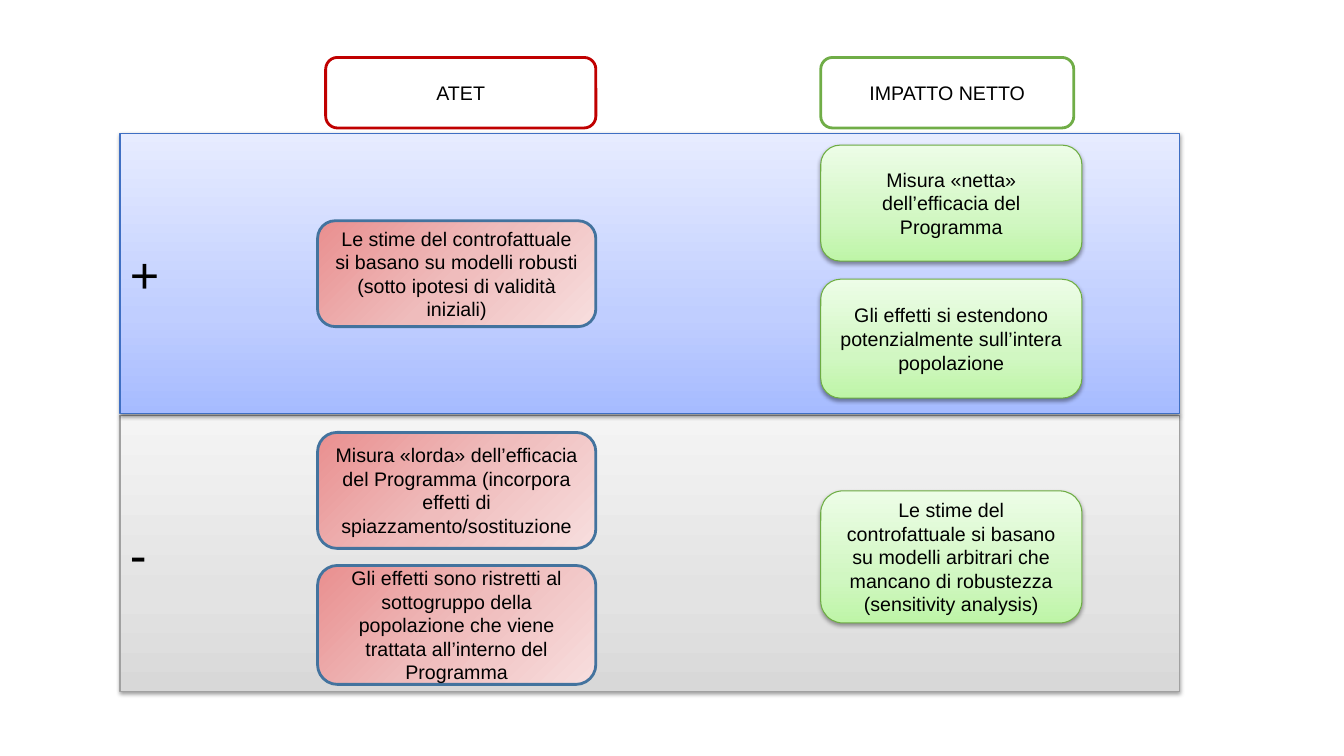
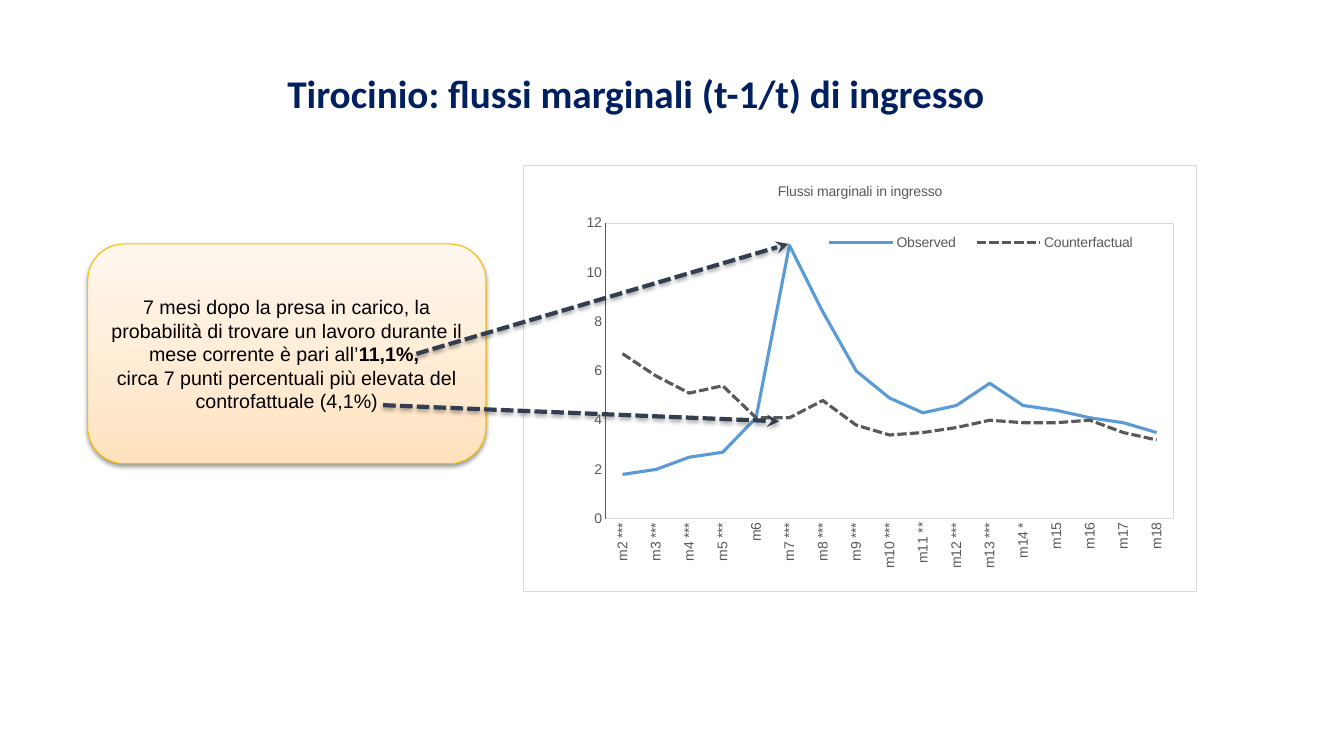
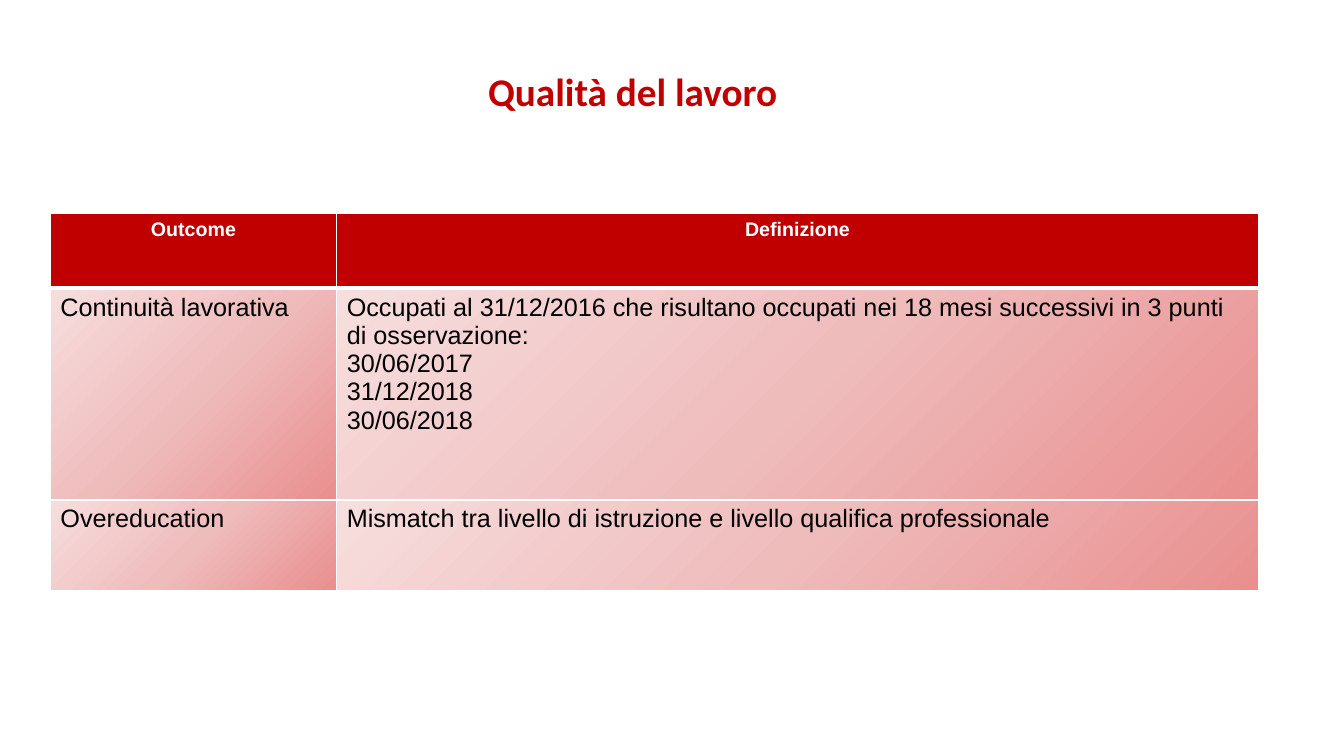
from dataclasses import dataclass

from pptx import Presentation
from pptx.chart.data import CategoryChartData
from pptx.dml.color import RGBColor
from pptx.enum.chart import XL_CHART_TYPE, XL_LEGEND_POSITION, XL_TICK_MARK
from pptx.enum.dml import MSO_LINE
from pptx.enum.shapes import MSO_CONNECTOR, MSO_SHAPE
from pptx.enum.text import MSO_ANCHOR, PP_ALIGN
from pptx.oxml import parse_xml
from pptx.oxml.ns import nsdecls, qn
from pptx.util import Inches, Pt


@dataclass(frozen=True)
class Theme:
    body_font: str = "Arial"
    title_font: str = "Calibri"
    black: str = "000000"
    white: str = "FFFFFF"
    navy: str = "002060"
    red: str = "C00000"
    green: str = "70AD47"
    arrow: str = "333F50"
    chart_text: str = "595959"
    chart_border: str = "D9D9D9"
    observed: str = "5B9BD5"
    title_size: int = 28
    sign_size: int = 36
    table_size: int = 18
    box_size: int = 14
    chart_size: int = 10


THEME = Theme()
RED_STOPS = ((0, "E98F8F"), (50, "EFBCBC"), (100, "F7DEDE"))


def panel(bottom, middle, top, line):
    """Style with a vertical gradient, a thin outline and a shadow."""
    return {"stops": ((0, bottom), (35, middle), (100, top)), "angle": 270,
            "line": line, "line_width": 0.75, "shadow": True}


STYLES = {
    "minus": panel("D8D8D8", "E3E3E3", "F4F4F4", "A1A1A1"),
    "plus": panel("A6BBFF", "C0CEFF", "E7ECFF", "3F6FC3"),
    "net": panel("BEF5A7", "D1F7C2", "EDFDE7", "6DAC43"),
    "note": panel("FFE2BD", "FFEAD1", "FFF7EE", "F9BC00"),
    "atet": {"stops": RED_STOPS, "angle": 45, "line": "43739E", "line_width": 2},
    "atet_head": {"line": THEME.red, "line_width": 2},
    "net_head": {"line": THEME.green, "line_width": 2},
}


def set_values(target, **values):
    for name, value in values.items():
        setattr(target, name, value)


def set_font(font, size, color=THEME.black, bold=False, name=THEME.body_font):
    set_values(font, name=name, size=Pt(size), bold=bold)
    font.color.rgb = RGBColor.from_string(color)


def set_line(line, color, width):
    line.color.rgb = RGBColor.from_string(color)
    line.width = Pt(width)


def set_gradient(fill, properties, stops, angle):
    """Put a gradient of several stops in place of an emptied fill."""
    fill.background()
    stop_xml = "".join(
        f'<a:gs pos="{position * 1000}"><a:srgbClr val="{color}"/></a:gs>'
        for position, color in stops)
    gradient = parse_xml(
        f'<a:gradFill {nsdecls("a")} rotWithShape="1"><a:gsLst>{stop_xml}</a:gsLst>'
        f'<a:lin ang="{angle * 60000}" scaled="0"/></a:gradFill>')
    properties.replace(properties.find(qn("a:noFill")), gradient)


def add_shadow(properties, distance=1.6, opacity=38):
    for effects in properties.findall(qn("a:effectLst")):
        properties.remove(effects)
    properties.append(parse_xml(
        f'<a:effectLst {nsdecls("a")}><a:outerShdw blurRad="{Pt(3.1)}" '
        f'dist="{Pt(distance)}" dir="5400000" rotWithShape="0">'
        f'<a:srgbClr val="000000"><a:alpha val="{opacity * 1000}"/></a:srgbClr>'
        '</a:outerShdw></a:effectLst>'))


def write_paragraphs(frame, paragraphs, size, align, **font):
    """Each paragraph is a string or a list of (text, bold) runs."""
    for index, content in enumerate(paragraphs):
        paragraph = frame.add_paragraph() if index else frame.paragraphs[0]
        paragraph.alignment = align
        runs = [(content, font.get("bold", False))] if isinstance(content, str) else content
        for text, bold in runs:
            run = paragraph.add_run()
            run.text = text
            set_font(run.font, size, **{**font, "bold": bold})


def add_box(slide, place, style_name, paragraphs, size=THEME.box_size,
            align=PP_ALIGN.CENTER, preset=MSO_SHAPE.ROUNDED_RECTANGLE):
    style = STYLES[style_name]
    shape = slide.shapes.add_shape(preset, *map(Inches, place))
    shape.shadow.inherit = False
    if "stops" in style:
        set_gradient(shape.fill, shape.element.spPr, style["stops"], style["angle"])
    else:
        shape.fill.solid()
        shape.fill.fore_color.rgb = RGBColor.from_string(THEME.white)
    set_line(shape.line, style["line"], style["line_width"])
    if style.get("shadow"):
        add_shadow(shape.element.spPr)
    set_values(shape.text_frame, word_wrap=True, vertical_anchor=MSO_ANCHOR.MIDDLE)
    write_paragraphs(shape.text_frame, paragraphs, size, align)


def add_title(slide, place, text, color):
    frame = slide.shapes.add_textbox(*map(Inches, place)).text_frame
    margin = Inches(0.1)
    set_values(frame, word_wrap=True, vertical_anchor=MSO_ANCHOR.MIDDLE,
               margin_left=margin, margin_right=margin,
               margin_top=margin, margin_bottom=margin)
    write_paragraphs(frame, [text], THEME.title_size, PP_ALIGN.CENTER,
                     color=color, bold=True, name=THEME.title_font)
    frame.paragraphs[0].line_spacing = 0.9


def add_arrow(slide, start, end):
    arrow = slide.shapes.add_connector(
        MSO_CONNECTOR.STRAIGHT, *map(Inches, (*start, *end)))
    set_line(arrow.line, THEME.arrow, 3)
    arrow.line.dash_style = MSO_LINE.SQUARE_DOT
    properties = arrow.element.spPr
    properties.find(qn("a:ln")).append(
        parse_xml(f'<a:tailEnd {nsdecls("a")} type="stealth"/>'))
    add_shadow(properties, distance=1.8, opacity=35)


def manual_layout(x, y, width, height, inner=False):
    target = '<c:layoutTarget val="inner"/>' if inner else ""
    return parse_xml(
        f'<c:layout {nsdecls("c")}><c:manualLayout>{target}'
        '<c:xMode val="edge"/><c:yMode val="edge"/>'
        f'<c:x val="{x}"/><c:y val="{y}"/><c:w val="{width}"/><c:h val="{height}"/>'
        '</c:manualLayout></c:layout>')


def chart_frame(fill):
    return parse_xml(
        f'<c:spPr {nsdecls("c", "a")}>{fill}<a:ln w="{Pt(0.75)}"><a:solidFill>'
        f'<a:srgbClr val="{THEME.chart_border}"/></a:solidFill></a:ln></c:spPr>')


def place_chart_parts(chart):
    """Set the plot and legend positions and the two frames."""
    space = chart.element
    plot_area = space.find(".//" + qn("c:plotArea"))
    for layout in plot_area.findall(qn("c:layout")):
        plot_area.remove(layout)
    plot_area.insert(0, manual_layout(0.122, 0.135, 0.844, 0.695, inner=True))
    plot_area.append(chart_frame("<a:noFill/>"))
    legend = space.find(".//" + qn("c:legend"))
    for layout in legend.findall(qn("c:layout")):
        legend.remove(layout)
    legend.find(qn("c:legendPos")).addnext(manual_layout(0.43, 0.15, 0.5, 0.06))
    white = f'<a:solidFill><a:srgbClr val="{THEME.white}"/></a:solidFill>'
    space.find(qn("c:chart")).addnext(chart_frame(white))


def add_line_chart(slide, place, title, categories, series_styles):
    """series_styles holds (name, values, color, dash) for each line."""
    data = CategoryChartData(number_format="0.0")
    data.categories = categories
    for name, values, _, _ in series_styles:
        data.add_series(name, values)
    chart = slide.shapes.add_chart(
        XL_CHART_TYPE.LINE, *map(Inches, place), data).chart
    set_font(chart.font, THEME.chart_size)
    set_values(chart, has_title=True, has_legend=True)
    write_paragraphs(chart.chart_title.text_frame, [title], THEME.chart_size,
                     PP_ALIGN.CENTER, color=THEME.chart_text)
    set_values(chart.legend, position=XL_LEGEND_POSITION.BOTTOM,
               include_in_layout=False)
    set_font(chart.legend.font, THEME.chart_size, THEME.chart_text)

    axis_lines = ((chart.category_axis, THEME.chart_border),
                  (chart.value_axis, THEME.chart_text))
    for axis, color in axis_lines:
        set_values(axis, has_major_gridlines=False,
                   major_tick_mark=XL_TICK_MARK.NONE,
                   minor_tick_mark=XL_TICK_MARK.NONE)
        set_font(axis.tick_labels.font, THEME.chart_size, THEME.chart_text)
        set_line(axis.format.line, color, 0.75)
    set_values(chart.value_axis, minimum_scale=0, maximum_scale=12, major_unit=2)
    set_values(chart.value_axis.tick_labels, number_format="0",
               number_format_is_linked=False)
    label_body = chart.category_axis.element.find(
        qn("c:txPr")).find(qn("a:bodyPr")) if hasattr(
        chart.category_axis, "element") else chart.element.find(
        ".//" + qn("c:catAx")).find(qn("c:txPr")).find(qn("a:bodyPr"))
    label_body.set("rot", "-5400000")
    label_body.set("vert", "horz")

    plot = chart.plots[0]
    plot.vary_by_categories = False
    for series, (_, _, color, dash) in zip(plot.series, series_styles):
        series.smooth = False
        set_line(series.format.line, color, 2.25)
        if dash:
            series.format.line.dash_style = dash
    place_chart_parts(chart)


def set_cell_borders(cell, bottom_width):
    properties = cell._tc.get_or_add_tcPr()
    widths = {"lnL": 1, "lnR": 1, "lnT": 1, "lnB": bottom_width}
    for index, (side, width) in enumerate(widths.items()):
        properties.insert(index, parse_xml(
            f'<a:{side} {nsdecls("a")} w="{Pt(width)}"><a:solidFill>'
            f'<a:srgbClr val="{THEME.white}"/></a:solidFill></a:{side}>'))


def add_definition_table(slide, place, widths, heights, rows):
    """Each cell of rows is a list of paragraphs; the first row is the header."""
    table = slide.shapes.add_table(
        len(rows), len(widths), *map(Inches, place)).table
    set_values(table, first_row=False, horz_banding=False)
    for column, width in zip(table.columns, widths):
        column.width = Inches(width)
    for row_index, (row, height) in enumerate(zip(rows, heights)):
        table.rows[row_index].height = Inches(height)
        for column_index, paragraphs in enumerate(row):
            cell = table.cell(row_index, column_index)
            if row_index == 0:
                cell.fill.solid()
                cell.fill.fore_color.rgb = RGBColor.from_string(THEME.red)
                write_paragraphs(cell.text_frame, paragraphs, THEME.box_size,
                                 PP_ALIGN.CENTER, color=THEME.white, bold=True)
            else:
                set_gradient(cell.fill, cell._tc.get_or_add_tcPr(), RED_STOPS, 225)
                write_paragraphs(cell.text_frame, paragraphs, THEME.table_size,
                                 PP_ALIGN.LEFT)
            # The line under a cell is also the top line of the next row.
            set_cell_borders(cell, 3 if row_index == 0 else 1)


def build_comparison(slide):
    for style, sign, top, height in (("minus", "-", 4.12, 2.74),
                                     ("plus", "+", 1.32, 2.78)):
        add_box(slide, (1.19, top, 10.51, height), style, [sign],
                THEME.sign_size, PP_ALIGN.LEFT, MSO_SHAPE.RECTANGLE)
    columns = {
        "atet": (3.15, 2.76, (
            (2.19, 1.05, "Le stime del controfattuale si basano su modelli robusti "
                         "(sotto ipotesi di validità iniziali)"),
            (4.29, 1.15, "Misura «lorda» dell’efficacia del Programma (incorpora "
                         "effetti di spiazzamento/sostituzione"),
            (5.61, 1.18, "Gli effetti sono ristretti al sottogruppo della popolazione "
                         "che viene trattata all’interno del Programma"))),
        "net": (8.14, 2.59, (
            (1.44, 1.15, "Misura «netta» dell’efficacia del Programma"),
            (2.77, 1.18, "Gli effetti si estendono potenzialmente sull’intera "
                         "popolazione"),
            (4.87, 1.31, "Le stime del controfattuale si basano su modelli arbitrari "
                         "che mancano di robustezza (sensitivity analysis)"))),
    }
    for style, (left, width, boxes) in columns.items():
        for top, height, text in boxes:
            add_box(slide, (left, top, width, height), style, [text])
    add_box(slide, (3.23, 0.57, 2.68, 0.7), "atet_head", ["ATET"])
    add_box(slide, (8.14, 0.57, 2.51, 0.7), "net_head", ["IMPATTO NETTO"])


def build_entry_flows(slide):
    add_box(slide, (0.87, 2.42, 3.95, 2.18), "note", [
        [("7 mesi dopo la presa in carico, la probabilità di trovare un lavoro "
          "durante il mese corrente è pari all’", False), ("11,1%, ", True)],
        "circa 7 punti percentuali più elevata del controfattuale (4,1%)"])
    add_title(slide, (0.87, 0.64, 10.87, 0.62),
              "Tirocinio: flussi marginali (t-1/t) di ingresso", THEME.navy)
    categories = ["m2 ***", "m3 ***", "m4 ***", "m5 ***", "m6", "m7 ***", "m8 ***",
                  "m9 ***", "m10 ***", "m11 **", "m12 ***", "m13 ***", "m14 *",
                  "m15", "m16", "m17", "m18"]
    observed = (1.8, 2, 2.5, 2.7, 4.1, 11.1, 8.4, 6, 4.9, 4.3, 4.6, 5.5, 4.6, 4.4,
                4.1, 3.9, 3.5)
    counterfactual = (6.7, 5.8, 5.1, 5.4, 4.1, 4.1, 4.8, 3.8, 3.4, 3.5, 3.7, 4, 3.9,
                      3.9, 4, 3.5, 3.2)
    add_line_chart(
        slide, (5.19, 1.64, 6.68, 4.23), "Flussi marginali in ingresso", categories,
        (("Observed", observed, THEME.observed, None),
         ("Counterfactual", counterfactual, THEME.chart_text, MSO_LINE.SQUARE_DOT)))
    add_arrow(slide, (4.13, 3.51), (7.82, 2.42))
    add_arrow(slide, (3.8, 4.02), (7.73, 4.18))


def build_job_quality(slide):
    add_title(slide, (0.89, 0.64, 10.77, 0.59), "Qualità del lavoro", THEME.red)
    add_definition_table(
        slide, (0.5, 2.12, 11.98, 3.74), (2.84, 9.14), (0.74, 2.1, 0.9), (
            (["Outcome"], ["Definizione"]),
            (["Continuità lavorativa"],
             ["Occupati al 31/12/2016 che risultano occupati nei 18 mesi successivi "
              "in 3 punti di osservazione:",
              "30/06/2017", "31/12/2018", "30/06/2018"]),
            (["Overeducation"],
             ["Mismatch tra livello di istruzione e livello qualifica professionale"])))


def main():
    presentation = Presentation()
    set_values(presentation, slide_width=Inches(13.33), slide_height=Inches(7.5))
    blank = presentation.slide_layouts[6]
    for build in (build_comparison, build_entry_flows, build_job_quality):
        build(presentation.slides.add_slide(blank))
    presentation.save("out.pptx")


if __name__ == "__main__":
    main()
